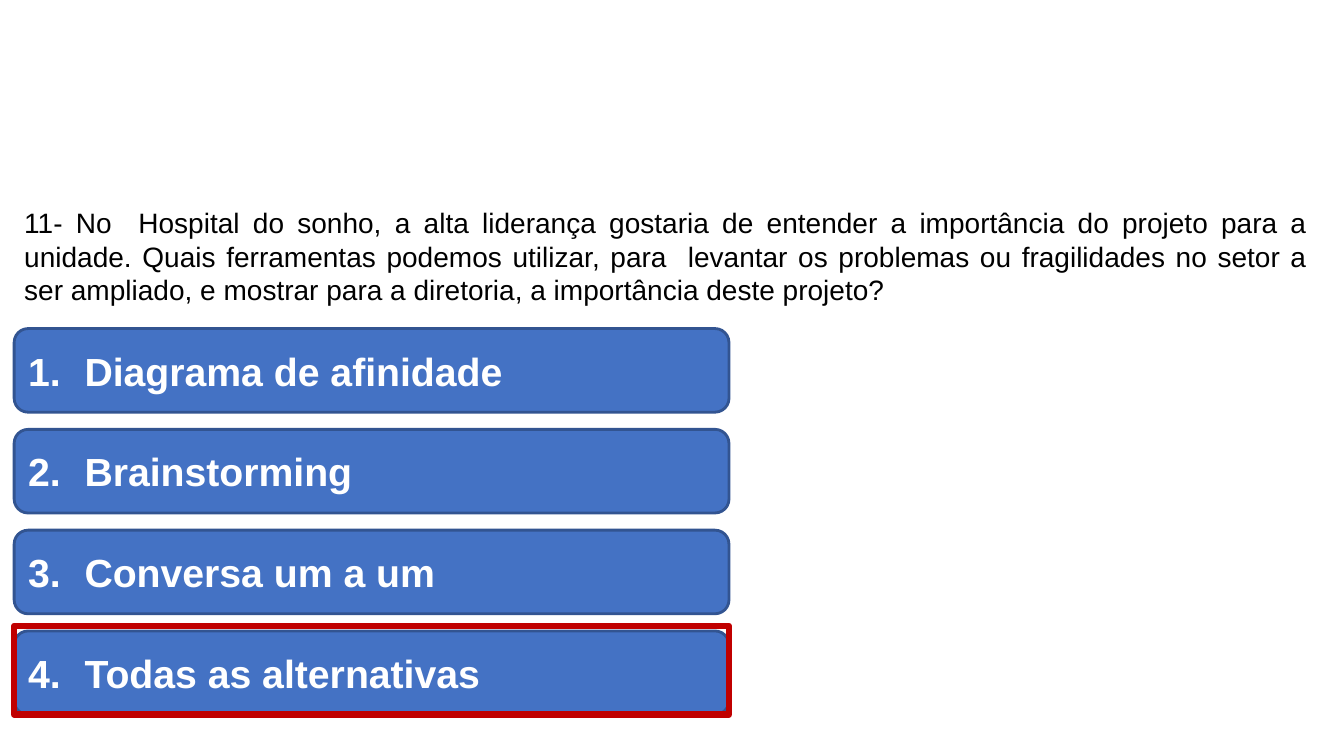
from dataclasses import dataclass

from lxml import etree
from pptx import Presentation
from pptx.dml.color import RGBColor
from pptx.enum import shapes, text
from pptx.oxml.ns import qn
from pptx.util import Inches, Pt


@dataclass(frozen=True)
class Theme:
    font: str = "Arial"
    paper: str = "FFFFFF"
    ink: str = "000000"
    option_fill: str = "4472C4"
    option_line: str = "325491"
    answer_line: str = "C00000"
    question_size: float = 20
    option_size: float = 28
    option_line_width: float = 2
    answer_line_width: float = 4.5


THEME = Theme()

QUESTION = (
    "11- No  Hospital do sonho, a alta liderança gostaria de entender a "
    "importância do projeto para a unidade. Quais ferramentas podemos utilizar, "
    "para  levantar os problemas ou fragilidades no setor a ser ampliado, e "
    "mostrar para a diretoria, a importância deste projeto?"
)
OPTIONS = [
    "Diagrama de afinidade",
    "Brainstorming",
    "Conversa um a um",
    "Todas as alternativas",
]
ANSWER = 4

LEFT = 0.14
OPTION_TOP = 3.26
OPTION_STEP = 1.0
OPTION_WIDTH = 7.09
OPTION_HEIGHT = 0.83
ANSWER_MARGIN = 0.05
NUMBER_INDENT = 0.56


def colour(value):
    return RGBColor.from_string(value)


def place(shape, left, top, width, height):
    shape.left, shape.top = Inches(left), Inches(top)
    shape.width, shape.height = Inches(width), Inches(height)


def number_paragraph(paragraph, number, number_colour):
    """Give the paragraph a hanging automatic number."""
    properties = paragraph._p.get_or_add_pPr()
    indent = Inches(NUMBER_INDENT)
    properties.set("marL", str(indent))
    properties.set("indent", str(-indent))
    bullet_colour = etree.SubElement(properties, qn("a:buClr"))
    etree.SubElement(bullet_colour, qn("a:srgbClr"), val=number_colour)
    etree.SubElement(properties, qn("a:buFont"), typeface="+mj-lt")
    etree.SubElement(
        properties, qn("a:buAutoNum"), type="arabicPeriod", startAt=str(number)
    )


def write(shape, wording, *, size, ink, bold=False, number=None,
          align=text.PP_ALIGN.LEFT, anchor=text.MSO_ANCHOR.TOP):
    frame = shape.text_frame
    frame.word_wrap = True
    frame.auto_size = text.MSO_AUTO_SIZE.NONE
    frame.vertical_anchor = anchor
    paragraph = frame.paragraphs[0]
    paragraph.alignment = align
    if number is not None:
        number_paragraph(paragraph, number, ink)
    run = paragraph.add_run()
    run.text = wording
    run.font.name = THEME.font
    run.font.size = Pt(size)
    run.font.bold = bold
    run.font.color.rgb = colour(ink)


def add_box(slide, kind, bounds, *, line, line_width, fill=None):
    box = slide.shapes.add_shape(kind, *map(Inches, bounds))
    box.shadow.inherit = False
    if fill is None:
        box.fill.background()
    else:
        box.fill.solid()
        box.fill.fore_color.rgb = colour(fill)
    box.line.color.rgb = colour(line)
    box.line.width = Pt(line_width)
    return box


def add_question(slide):
    question = slide.shapes.title
    place(question, LEFT, 1.99, 12.93, 1.11)
    question.fill.solid()
    question.fill.fore_color.rgb = colour(THEME.paper)
    write(question, QUESTION, size=THEME.question_size, ink=THEME.ink,
          align=text.PP_ALIGN.JUSTIFY)


def option_top(number):
    return OPTION_TOP + (number - 1) * OPTION_STEP


def add_option(slide, number, wording):
    option = add_box(
        slide, shapes.MSO_SHAPE.ROUNDED_RECTANGLE,
        (LEFT, option_top(number), OPTION_WIDTH, OPTION_HEIGHT),
        fill=THEME.option_fill, line=THEME.option_line,
        line_width=THEME.option_line_width,
    )
    write(option, wording, size=THEME.option_size, ink=THEME.paper, bold=True,
          number=number, anchor=text.MSO_ANCHOR.MIDDLE)


def mark_answer(slide, number):
    add_box(
        slide, shapes.MSO_SHAPE.RECTANGLE,
        (LEFT, option_top(number) - ANSWER_MARGIN,
         OPTION_WIDTH, OPTION_HEIGHT + ANSWER_MARGIN),
        line=THEME.answer_line, line_width=THEME.answer_line_width,
    )


def main():
    deck = Presentation()
    deck.slide_width, deck.slide_height = Inches(13.33), Inches(7.5)
    title_only = deck.slide_layouts[5]
    slide = deck.slides.add_slide(title_only)

    add_question(slide)
    for number, wording in enumerate(OPTIONS, start=1):
        add_option(slide, number, wording)
    mark_answer(slide, ANSWER)

    deck.save("out.pptx")


if __name__ == "__main__":
    main()
